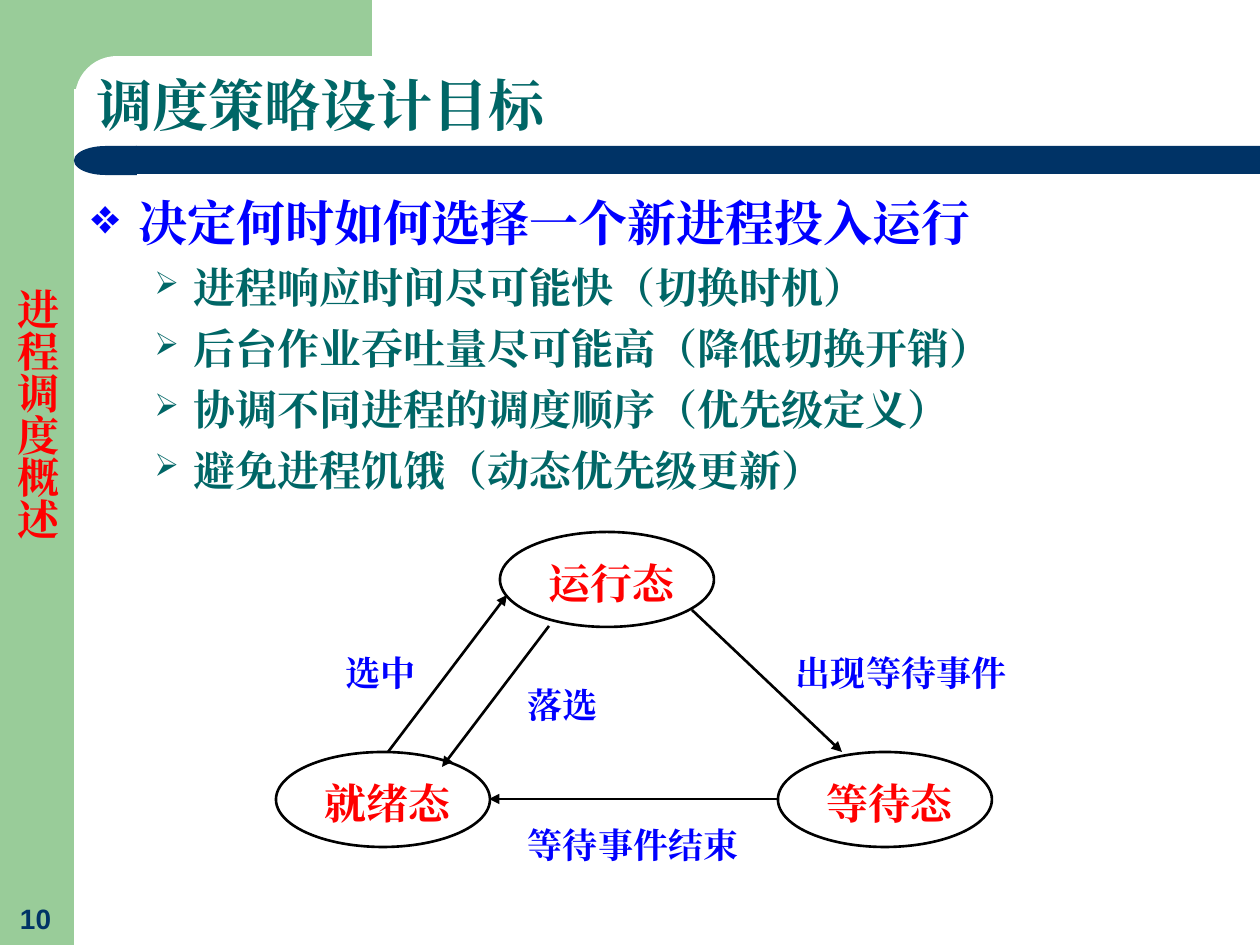
from lxml.etree import SubElement
from pptx import Presentation
from pptx.dml.color import RGBColor
from pptx.enum.shapes import MSO_CONNECTOR, MSO_SHAPE
from pptx.enum.text import MSO_ANCHOR, PP_ALIGN
from pptx.oxml.ns import qn
from pptx.util import Pt

SCALE = 914400 / 126
GREEN, NAVY, TEAL = "99CC99", "003366", "006666"
RED, BLUE, WHITE, BLACK = "FF0000", "0000FF", "FFFFFF", "000000"
SERIF, SANS, CJK = "Times New Roman", "Arial", "Noto Sans CJK SC"


def px(length):
    """Turn pixels into EMU."""
    return round(length * SCALE)


def color(value):
    """Turn a hex string into a colour."""
    return RGBColor.from_string(value)


def add_block(slide, kind, box, fill, line=None):
    """Add a filled preset shape."""
    shape = slide.shapes.add_shape(kind, *map(px, box))
    shape.shadow.inherit = False
    shape.fill.solid()
    shape.fill.fore_color.rgb = color(fill)
    if line:
        shape.line.color.rgb = color(line)
        shape.line.width = Pt(1.5)
    else:
        shape.line.fill.background()
    return shape


def format_runs(paragraph, size, ink, font=SERIF):
    """Give every run of a paragraph its bold font, size and colour."""
    for run in paragraph.runs:
        run.font.size = Pt(size)
        run.font.bold = True
        run.font.color.rgb = color(ink)
        run.font.name = font
        SubElement(run.font._element, qn("a:ea")).set("typeface", SERIF)


def add_text(slide, box, text, size, ink, font=SERIF, anchor=MSO_ANCHOR.BOTTOM,
             align=PP_ALIGN.LEFT, spacing=1.0):
    """Add a text box holding one paragraph."""
    shape = slide.shapes.add_textbox(*map(px, box))
    frame = shape.text_frame
    frame.word_wrap = True
    frame.vertical_anchor = anchor
    frame.text = text
    paragraph = frame.paragraphs[0]
    paragraph.alignment = align
    paragraph.line_spacing = spacing
    format_runs(paragraph, size, ink, font)
    return shape


def add_sidebar(slide, box, topic, number):
    """Draw the left band with its vertical topic and page number."""
    left, top, width, height = box
    add_block(slide, MSO_SHAPE.RECTANGLE, box, GREEN)
    add_text(slide, (left - 5, top + 895, width + 7, 46), number, 16, NAVY, SANS,
             align=PP_ALIGN.CENTER)
    label = add_text(slide, (left + 5, top + 276, width - 5, 534), topic, 24, RED,
                     align=PP_ALIGN.CENTER, spacing=0.9)
    label.text_frame._txBody.bodyPr.set("vert", "eaVert")


def add_header(slide, box, title):
    """Draw the corner block, the title and the bar beneath it."""
    left, top, width, height = box
    add_block(slide, MSO_SHAPE.RECTANGLE, (left, top - 1, 298, 90), GREEN)
    corner = add_block(slide, MSO_SHAPE.ROUNDED_RECTANGLE,
                       (left + 1, top + 56, 703, 84), WHITE)
    corner.adjustments[0] = 0.5
    bar_top = top + height - 29
    add_block(slide, MSO_SHAPE.RECTANGLE, (left + 62, bar_top, width - 62, 28), NAVY)
    cap = add_block(slide, MSO_SHAPE.FLOWCHART_DELAY, (left, bar_top, 63, 29), NAVY)
    cap._element.spPr.xfrm.set("flipH", "1")
    add_text(slide, (left + 10, top + 56, 1152, 89), title, 32, TEAL, spacing=0.9)


def add_bullet(paragraph, mark, ink, percent, margin, hanging):
    """Give a paragraph a hanging bullet."""
    properties = paragraph._p.get_or_add_pPr()
    properties.set("marL", str(px(margin)))
    properties.set("indent", str(-px(hanging)))
    bullet_color = SubElement(properties, qn("a:buClr"))
    SubElement(bullet_color, qn("a:srgbClr")).set("val", ink)
    SubElement(properties, qn("a:buSzPct")).set("val", str(percent * 1000))
    SubElement(properties, qn("a:buChar")).set("char", mark)


def add_goals(slide, box, heading, goals):
    """Write the heading and the goals below it as bullets."""
    shape = add_text(slide, box, heading, 28, BLUE, anchor=MSO_ANCHOR.TOP)
    frame = shape.text_frame
    add_bullet(frame.paragraphs[0], "❖", BLUE, 100, 47, 47)
    for goal in goals:
        paragraph = frame.add_paragraph()
        paragraph.text = goal
        add_bullet(paragraph, "➢", TEAL, 75, 102, 39)
        paragraph.space_before = Pt(6)
        format_runs(paragraph, 24, TEAL)


def add_arrow(slide, start, end):
    """Draw a line with an arrowhead at its end."""
    arrow = slide.shapes.add_connector(MSO_CONNECTOR.STRAIGHT,
                                       *map(px, start + end))
    arrow.line.color.rgb = color(BLACK)
    arrow.line.width = Pt(1.5)
    SubElement(arrow.line._get_or_add_ln(), qn("a:tailEnd")).set("type", "triangle")
    SubElement(arrow._element.spPr, qn("a:effectLst"))


def add_label(slide, box, text, size, ink):
    """Write a diagram label on a white ground."""
    shape = add_text(slide, box, text, size, ink, CJK, MSO_ANCHOR.TOP)
    shape.fill.solid()
    shape.fill.fore_color.rgb = color(WHITE)
    frame = shape.text_frame
    frame.margin_left = frame.margin_right = frame.margin_bottom = 0
    frame.margin_top = px(10)


def add_state_diagram(slide, box):
    """Draw the process states and the transitions between them."""
    left, top, width, height = box
    states = [("运行态", 224, 0, 49), ("就绪态", 0, 220, 49), ("等待态", 502, 220, 49)]
    arrows = [((112, 220), (231, 63)), ((273, 94), (166, 235)),
              ((416, 78), (566, 220)), ((502, 267), (213, 267))]
    transitions = [("选中", 70, 109), ("落选", 252, 141),
                   ("出现等待事件", 520, 109), ("等待事件结束", 252, 282)]
    for name, x, y, indent in states:
        add_block(slide, MSO_SHAPE.OVAL, (left + x, top + y, 214, 95), WHITE, BLACK)
    for (x1, y1), (x2, y2) in arrows:
        add_arrow(slide, (left + x1, top + y1), (left + x2, top + y2))
    for name, x, y, indent in states:
        add_label(slide, (left + x + indent, top + y + 16, 129, 63), name, 24, RED)
    for name, x, y in transitions:
        add_label(slide, (left + x, top + y, 35 * len(name) + 4, 63), name, 20, BLUE)


def main():
    """Build the slide and save it."""
    presentation = Presentation()
    presentation.slide_width, presentation.slide_height = px(1260), px(945)
    slide = presentation.slides.add_slide(presentation.slide_layouts[6])
    add_sidebar(slide, (0, 0, 74, 945), "进程调度概述", "10")
    add_header(slide, (74, 0, 1186, 175), "调度策略设计目标")
    add_goals(slide, (79, 186, 1176, 320), "决定何时如何选择一个新进程投入运行", [
        "进程响应时间尽可能快（切换时机）",
        "后台作业吞吐量尽可能高（降低切换开销）",
        "协调不同进程的调度顺序（优先级定义）",
        "避免进程饥饿（动态优先级更新）",
    ])
    add_state_diagram(slide, (276, 532, 755, 345))
    presentation.save("out.pptx")


if __name__ == "__main__":
    main()
